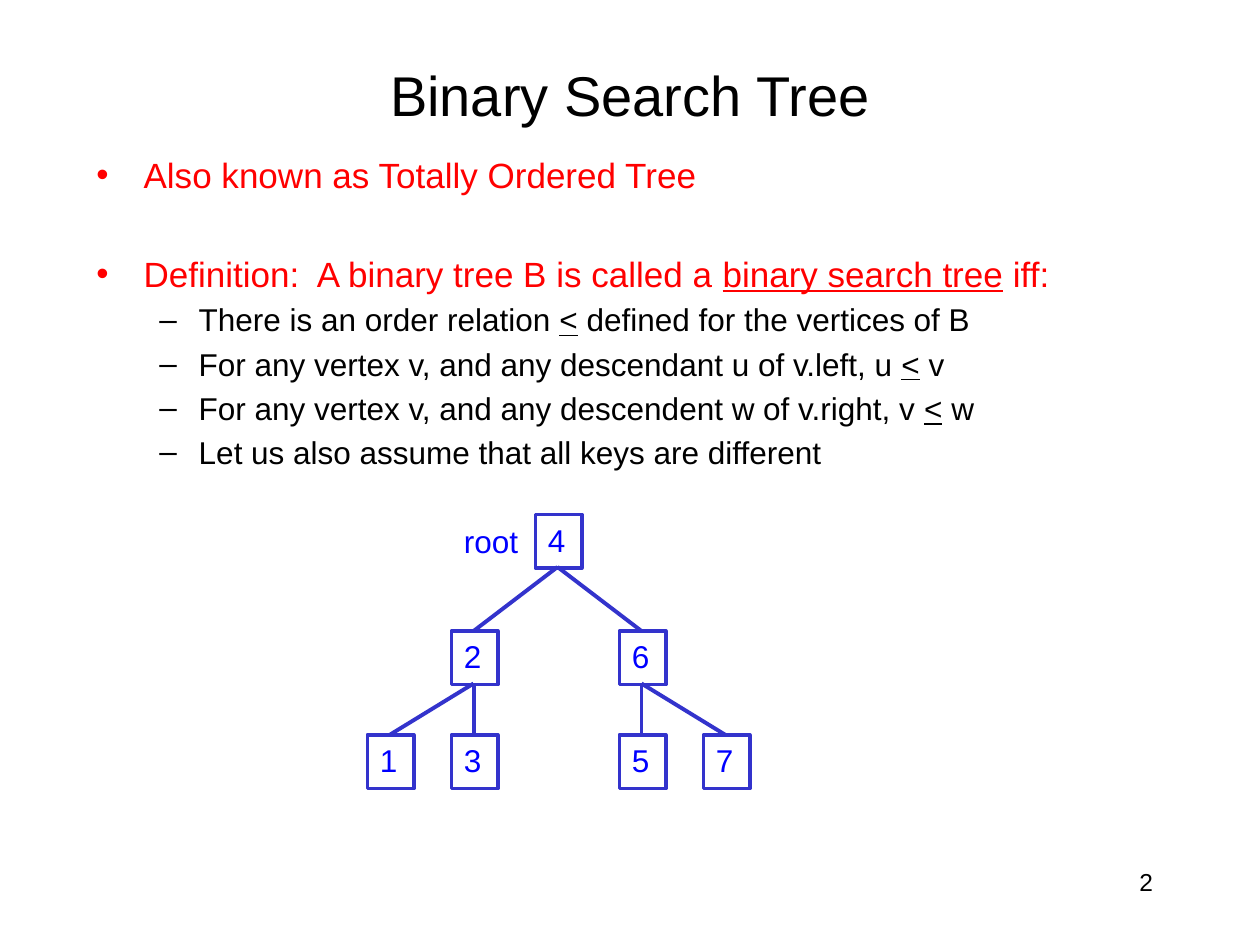
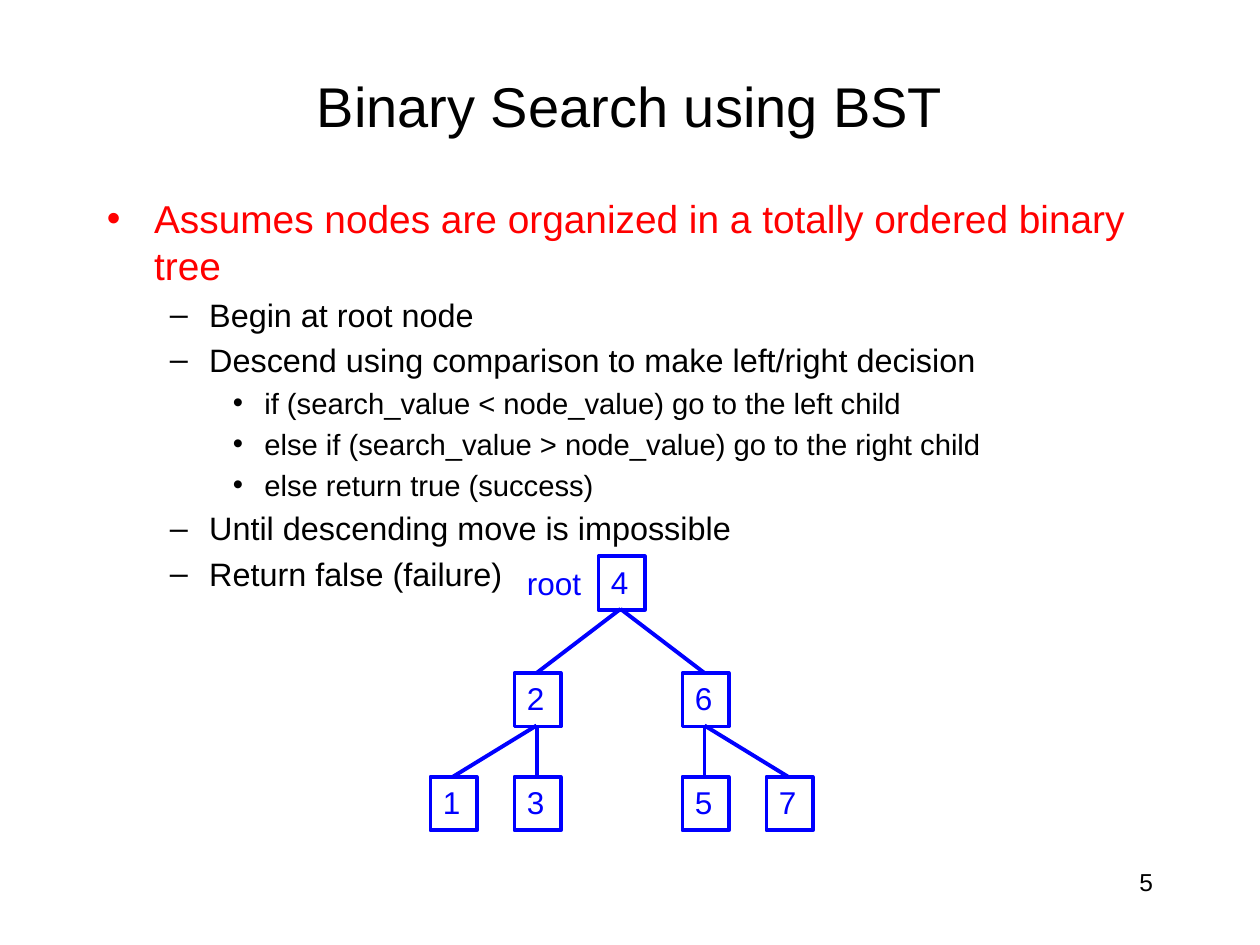
from collections import namedtuple
from dataclasses import dataclass

from lxml import etree
from pptx import Presentation
from pptx.dml.color import RGBColor
from pptx.enum.shapes import MSO_CONNECTOR, MSO_SHAPE
from pptx.enum.text import MSO_ANCHOR, MSO_AUTO_SIZE, PP_ALIGN
from pptx.oxml.ns import qn
from pptx.util import Inches, Pt

RECTANGLE, STRAIGHT = MSO_SHAPE.RECTANGLE, MSO_CONNECTOR.STRAIGHT
MIDDLE, TOP = MSO_ANCHOR.MIDDLE, MSO_ANCHOR.TOP
LEFT, CENTER, RIGHT = PP_ALIGN.LEFT, PP_ALIGN.CENTER, PP_ALIGN.RIGHT
FIXED, GROW = MSO_AUTO_SIZE.NONE, MSO_AUTO_SIZE.SHAPE_TO_FIT_TEXT
TITLE_ONLY = 5

WIDTH, HEIGHT = Inches(10), Inches(7.5)
COLUMNS = 120
CELL = WIDTH / COLUMNS

Box = namedtuple("Box", "left top width height")
Level = namedtuple("Level", "bullet margin hanging color")
Node = namedtuple("Node", "column row parent")


@dataclass(frozen=True)
class Theme:
    font: str = "Arial"
    black: RGBColor = RGBColor(0, 0, 0)
    red: RGBColor = RGBColor(255, 0, 0)
    blue: RGBColor = RGBColor(0, 0, 255)
    indigo: RGBColor = RGBColor(0x33, 0x33, 0xCC)
    title: float = 32
    node: float = 18
    page_number: float = 14
    definition_levels: tuple = (20, 18)
    search_levels: tuple = (22.2, 18.5, 16.7)
    line: float = 2.25
    spacing: float = 0.2
    first_spacing: float = 2
    section_spacing: float = 32.5


THEME = Theme()
LEVELS = (
    Level("•", 4.5, 4.5, THEME.red),
    Level("–", 9.75, 3.75, THEME.black),
    Level("•", 15, 3, THEME.black),
)

PAGE_NUMBER_BOX = Box(86, 82, 25, 6)
NODE_WIDTH, NODE_HEIGHT = 4.4, 5.1
COLUMN_STEP = 8
ROW_TOPS = (0, 11.1, 21)
EDGE_X, EDGE_Y = 2.1, 5
ROOT_LABEL = Box(8, 0.1, 7.6, 4.8)
NODES = {
    "4": Node(2, 0, None),
    "2": Node(1, 1, "4"),
    "6": Node(3, 1, "4"),
    "1": Node(0, 2, "2"),
    "3": Node(1, 2, "2"),
    "5": Node(3, 2, "6"),
    "7": Node(4, 2, "6"),
}

DEFINITION = (
    (0, "Also known as Totally Ordered Tree"),
    (0, "Definition:  A binary tree B is called a |binary search tree| iff:"),
    (1, "There is an order relation |<| defined for the vertices of B"),
    (1, "For any vertex v, and any descendant u of v.left, u |<| v"),
    (1, "For any vertex v, and any descendent w of v.right, v |<| w"),
    (1, "Let us also assume that all keys are different"),
)
SEARCH = (
    (0, "Assumes nodes are organized in a totally ordered binary tree"),
    (1, "Begin at root node"),
    (1, "Descend using comparison to make left/right decision"),
    (2, "if (search_value < node_value) go to the left child"),
    (2, "else if (search_value > node_value) go to the right child"),
    (2, "else return true (success)"),
    (1, "Until descending move is impossible"),
    (1, "Return false (failure)"),
)


def cells(*counts):
    return [round(count * CELL) for count in counts]


def style(paragraph, size, color, align=LEFT):
    paragraph.alignment = align
    font = paragraph.font
    font.name, font.size = THEME.font, Pt(size)
    font.color.rgb = color


def write(frame, text, size, color, align=LEFT, wrap=True, fit=FIXED, anchor=TOP):
    frame.text = text
    frame.word_wrap, frame.auto_size = wrap, fit
    frame.vertical_anchor = anchor
    style(frame.paragraphs[0], size, color, align)


def add_bullet(paragraph, level):
    properties = paragraph._p.get_or_add_pPr()
    margin, hanging = cells(level.margin, level.hanging)
    properties.set("marL", str(margin))
    properties.set("indent", str(-hanging))
    color = etree.SubElement(properties, qn("a:buClr"))
    etree.SubElement(color, qn("a:srgbClr"), val=str(level.color))
    etree.SubElement(properties, qn("a:buFont"), typeface=THEME.font)
    etree.SubElement(properties, qn("a:buChar"), char=level.bullet)


def place_title(slide, text, box):
    title = slide.shapes.title
    title.left, title.top, title.width, title.height = cells(*box)
    write(title.text_frame, text, THEME.title, THEME.black, CENTER, anchor=MIDDLE)


def place_page_number(slide, number, box):
    label = slide.shapes.add_textbox(*cells(*box))
    write(label.text_frame, str(number), THEME.page_number, THEME.black, RIGHT)


def place_outline(slide, outline, sizes, box):
    frame = slide.shapes.add_textbox(*cells(*box)).text_frame
    frame.word_wrap = True
    for index, (depth, text) in enumerate(outline):
        paragraph = frame.paragraphs[0] if index == 0 else frame.add_paragraph()
        paragraph.level = depth
        size, level = sizes[depth], LEVELS[depth]
        for part, words in enumerate(text.split("|")):
            run = paragraph.add_run()
            run.text = words
            if part % 2:
                run.font.underline = True
        if index == 0:
            before = THEME.first_spacing
        elif depth == 0:
            before = THEME.section_spacing
        else:
            before = THEME.spacing * size
        paragraph.space_before = Pt(before)
        add_bullet(paragraph, level)
        style(paragraph, size, level.color)


def place_tree(slide, left, top, line_color):
    def corner(key):
        node = NODES[key]
        return left + node.column * COLUMN_STEP, top + ROW_TOPS[node.row]

    def outline(line):
        line.color.rgb, line.width = line_color, Pt(THEME.line)

    for key in NODES:
        square = slide.shapes.add_shape(
            RECTANGLE, *cells(*corner(key), NODE_WIDTH, NODE_HEIGHT))
        square.shadow.inherit = False
        square.fill.background()
        outline(square.line)
        write(square.text_frame, key, THEME.node, THEME.blue, wrap=False, fit=GROW)

    for key, node in NODES.items():
        if node.parent:
            (start_x, start_y), (end_x, end_y) = corner(node.parent), corner(key)
            edge = slide.shapes.add_connector(STRAIGHT, *cells(
                start_x + EDGE_X, start_y + EDGE_Y, end_x + EDGE_X, end_y))
            outline(edge.line)
            etree.SubElement(edge._element.spPr, qn("a:effectLst"))

    label = slide.shapes.add_textbox(*cells(
        left + ROOT_LABEL.left, top + ROOT_LABEL.top,
        ROOT_LABEL.width, ROOT_LABEL.height))
    write(label.text_frame, "root", THEME.node, THEME.blue, wrap=False, fit=GROW)


def add_tree_slide(deck, number, title, title_box, outline, sizes, outline_box,
                   tree_corner, line_color):
    slide = deck.slides.add_slide(deck.slide_layouts[TITLE_ONLY])
    place_page_number(slide, number, PAGE_NUMBER_BOX)
    place_title(slide, title, title_box)
    place_outline(slide, outline, sizes, outline_box)
    place_tree(slide, *tree_corner, line_color)


def main():
    deck = Presentation()
    deck.slide_width, deck.slide_height = WIDTH, HEIGHT
    add_tree_slide(deck, 2, "Binary Search Tree", Box(9, 5, 102, 8),
                   DEFINITION, THEME.definition_levels, Box(8, 14, 103, 68),
                   (35, 49), THEME.indigo)
    add_tree_slide(deck, 5, "Binary Search using BST", Box(9, 5, 102, 10),
                   SEARCH, THEME.search_levels, Box(9, 18, 102, 35),
                   (41, 53), THEME.blue)
    deck.save("out.pptx")


if __name__ == "__main__":
    main()
